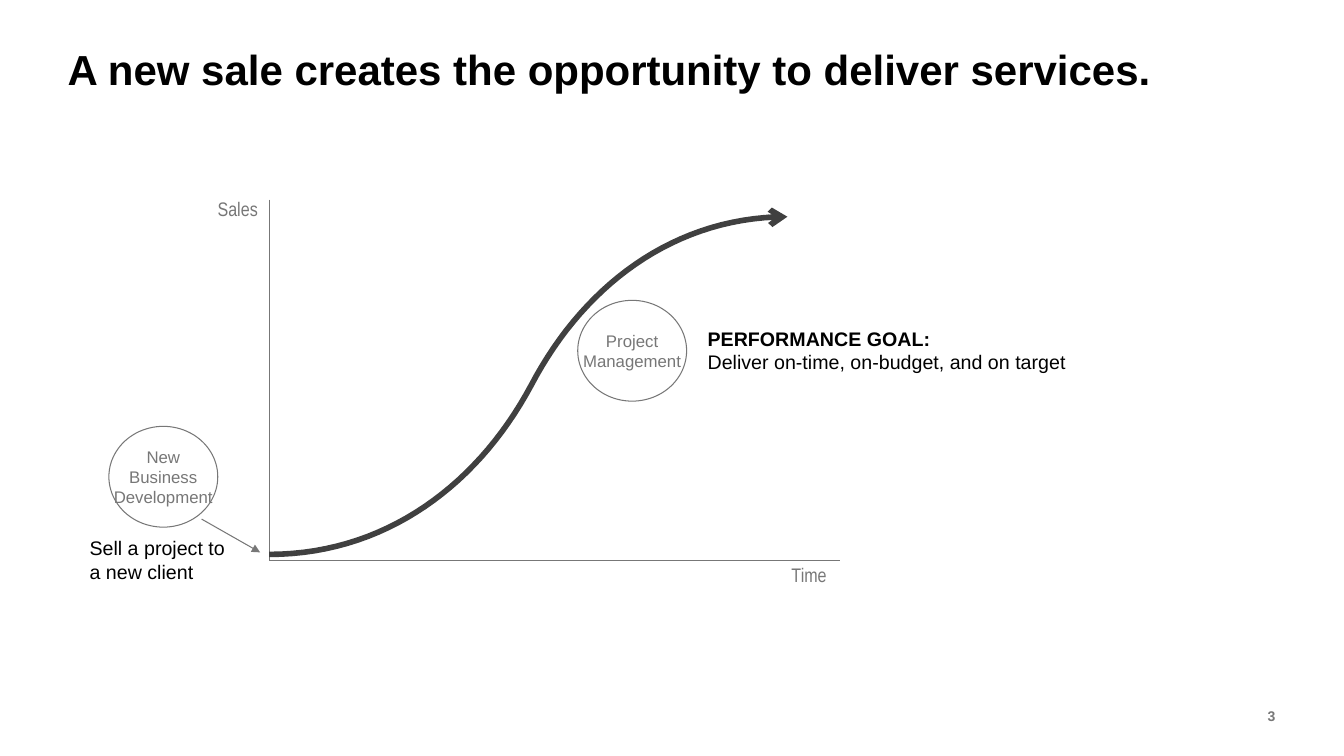
from pptx import Presentation
from pptx.dml.color import RGBColor
from pptx.enum.shapes import MSO_CONNECTOR, MSO_SHAPE
from pptx.enum.text import MSO_ANCHOR, MSO_AUTO_SIZE, PP_ALIGN
from pptx.oxml.ns import qn
from pptx.util import Inches, Pt
from lxml.etree import SubElement

COLORS = {"ink": "000000", "gray": "777777", "curve": "404040"}
TITLE = "A new sale creates the opportunity to deliver services."
PAGE = "3"
BOLD = {TITLE, PAGE, "PERFORMANCE GOAL:"}

# Text styles: size, font, color
HEAD = (30, "Arial", "ink")
NOTE = (14, "Arial", "ink")
AXIS = (14, "Arial Narrow", "gray")
STAGE = (12, "Arial", "gray")
FOOT = (10, "Arial", "gray")

# Stages on the curve: left, top, lines; all circles share one size
DISC = (1.08, 1)
STAGES = [
    (1.08, 4.23, ["New", "Business", "Development"]),
    (5.73, 2.98, ["Project", "Management"]),
]

# Straight lines: start, end, arrowhead
ORIGIN = (2.67, 5.56)
LINES = [
    ((2.67, 1.98), ORIGIN, None),
    (ORIGIN, (8.33, 5.56), None),
    ((2, 5.15), (2.58, 5.48), "triangle"),
]

# Labels: box, lines, style, wrap, anchor
LABELS = [
    ((7.75, 5.54, 0.56, 0.33), ["Time"], AXIS, False, MSO_ANCHOR.BOTTOM),
    ((2.06, 1.9, 0.6, 0.34), ["Sales"], AXIS, False, MSO_ANCHOR.BOTTOM),
    ((6.92, 3.19, 3.77, 0.57),
     ["PERFORMANCE GOAL:", "Deliver on-time, on-budget, and on target"],
     NOTE, False, MSO_ANCHOR.TOP),
    ((0.79, 5.27, 1.92, 0.57), ["Sell a project to", "a new client"],
     NOTE, True, MSO_ANCHOR.TOP),
]

# Growth curve: flat at both ends, steepest at the middle
FOOT_END, MIDDLE, TOP_END = (2.67, 5.5), (5.27, 3.82), (7.81, 2.15)
BEND = [(0, 0), (0.45, 0), (0.8, 0.42), (1, 1)]  # Bezier in a unit square
STEPS = 30


def bezier(t):
    """Point of BEND at t, from 0 to 1."""
    s = 1 - t
    weights = (s ** 3, 3 * s * s * t, 3 * s * t * t, t ** 3)
    return [sum(w * p[axis] for w, p in zip(weights, BEND))
            for axis in (0, 1)]


def half(end):
    """Stretch the bend from a flat end to the middle."""
    (x, y), (mid_x, mid_y) = end, MIDDLE
    bend = [bezier(i / STEPS) for i in range(STEPS + 1)]
    return [(Inches(x + u * (mid_x - x)), Inches(y + v * (mid_y - y)))
            for u, v in bend]


def color(name):
    return RGBColor.from_string(COLORS[name])


def write(frame, lines, style, align=PP_ALIGN.LEFT):
    size, face, tint = style
    for i, line in enumerate(lines):
        para = frame.add_paragraph() if i else frame.paragraphs[0]
        para.text = line
        para.alignment = align
        font = para.font
        font.size, font.name = Pt(size), face
        font.bold = line in BOLD
        font.color.rgb = color(tint)


def stroke(shape, tint, width, head=None):
    shape.line.color.rgb = color(tint)
    shape.line.width = Pt(width)
    if head:
        edge = shape._element.spPr.find(qn("a:ln"))
        SubElement(edge, qn("a:tailEnd"), type=head)


def outline(shape, *look):
    shape.shadow.inherit = False
    shape.fill.background()
    stroke(shape, *look)


def strip(frame):
    frame.margin_left = frame.margin_right = 0
    frame.margin_top = frame.margin_bottom = 0


deck = Presentation()
deck.slide_width, deck.slide_height = Inches(13.33), Inches(7.5)
slide = deck.slides.add_slide(deck.slide_layouts[5])
shapes = slide.shapes

# Title
title = shapes.title
title.left, title.top = Inches(0.67), Inches(0.43)
title.width, title.height = Inches(12), Inches(1.57)
frame = title.text_frame
strip(frame)
frame.auto_size = MSO_AUTO_SIZE.NONE
frame.vertical_anchor = MSO_ANCHOR.TOP
write(frame, [TITLE], HEAD)

# Stage circles
for left, top, lines in STAGES:
    disc = shapes.add_shape(MSO_SHAPE.OVAL, *map(Inches, (left, top, *DISC)))
    outline(disc, "gray", 0.75)
    disc.text_frame.word_wrap = False
    disc.text_frame.vertical_anchor = MSO_ANCHOR.MIDDLE
    write(disc.text_frame, lines, STAGE, PP_ALIGN.CENTER)

# Axes and pointer
for start, end, head in LINES:
    rule = shapes.add_connector(
        MSO_CONNECTOR.STRAIGHT, *map(Inches, start + end))
    stroke(rule, "gray", 0.75, head)
    SubElement(rule._element.spPr, qn("a:effectLst"))

# Growth curve: the upper half runs back from the middle to its flat end
spots = half(FOOT_END) + half(TOP_END)[-2::-1]
pen = shapes.build_freeform(*spots[0])
pen.add_line_segments(spots[1:], close=False)
outline(pen.convert_to_shape(), "curve", 4, "arrow")

# Labels
for box, lines, style, wrap, anchor in LABELS:
    frame = shapes.add_textbox(*map(Inches, box)).text_frame
    frame.word_wrap = wrap
    frame.vertical_anchor = anchor
    write(frame, lines, style)

# Page number
frame = shapes.add_textbox(*map(Inches, (12.17, 6.8, 0.48, 0.61))).text_frame
strip(frame)
frame.word_wrap = True
frame.vertical_anchor = MSO_ANCHOR.MIDDLE
write(frame, [PAGE], FOOT, PP_ALIGN.RIGHT)

deck.save("out.pptx")
